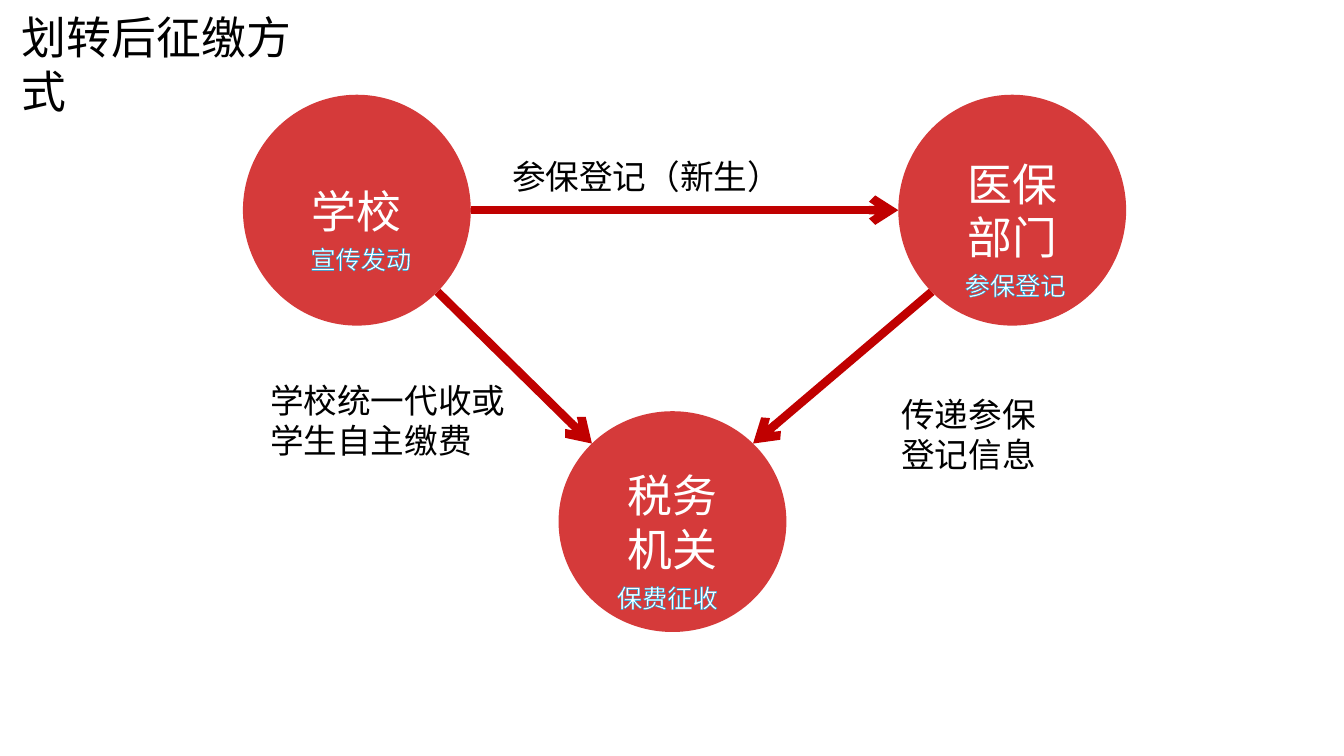
import math

from lxml import etree
from pptx import Presentation
from pptx.dml.color import RGBColor
from pptx.enum import shapes, text
from pptx.oxml import ns
from pptx.util import Inches, Pt

RED = RGBColor(0xD5, 0x3A, 0x3A)
DARK_RED = RGBColor(0xC0, 0x00, 0x00)
WHITE = RGBColor(0xFF, 0xFF, 0xFF)
BLACK = RGBColor(0x00, 0x00, 0x00)
SKY = RGBColor(0x00, 0xB0, 0xF0)
LATIN = "Arial"
CJK = "Noto Sans CJK SC"

TITLE = ("划转后征缴方式", (0.12, 0.05, 3.3, 0.64))
PARTIES = {
    "school": (["学校"], (2.41, 0.94, 2.26, 2.29)),
    "insurance": (["医保", "部门"], (8.91, 0.94, 2.26, 2.29)),
    "tax": (["税务", "机关"], (5.54, 4.08, 2.26, 2.19)),
}
ROLES = [
    ("宣传发动", (2.98, 2.37, 1.3, 0.4)),
    ("参保登记", (9.47, 2.63, 1.27, 0.4)),
    ("保费征收", (6.02, 5.73, 1.3, 0.4)),
]
FLOWS = [
    ("school", 0, "insurance", 180),
    ("school", 45, "tax", 225),
    ("insurance", 135, "tax", 315),
]
FLOW_LABELS = [
    ("参保登记（新生）", (4.98, 1.5, 3.28, 0.5)),
    ("学校统一代收或学生自主缴费", (2.58, 3.72, 2.69, 0.91)),
    ("传递参保登记信息", (8.84, 3.86, 1.67, 0.91)),
]


def add_run(paragraph, wording, size, face, color):
    run = paragraph.add_run()
    run.text = wording
    run.font.size = Pt(size)
    run.font.name = face
    run.font.color.rgb = color
    east_asian = etree.SubElement(run._r.get_or_add_rPr(), ns.qn("a:ea"))
    east_asian.set("typeface", CJK)
    return run


def add_label(slide, wording, box, size, color=BLACK):
    label = slide.shapes.add_textbox(*map(Inches, box))
    frame = label.text_frame
    frame.word_wrap = True
    frame.auto_size = text.MSO_AUTO_SIZE.SHAPE_TO_FIT_TEXT
    return add_run(frame.paragraphs[0], wording, size, LATIN, color)


def outline_run(run):
    properties = run._r.get_or_add_rPr()
    outline = etree.Element(ns.qn("a:ln"), w=str(Pt(0.8)))
    fill = etree.SubElement(outline, ns.qn("a:solidFill"))
    etree.SubElement(fill, ns.qn("a:srgbClr"), val=str(SKY))
    properties.insert(0, outline)


def add_party(slide, lines, box):
    circle = slide.shapes.add_shape(shapes.MSO_SHAPE.OVAL, *map(Inches, box))
    circle.shadow.inherit = False
    circle.fill.solid()
    circle.fill.fore_color.rgb = RED
    circle.line.fill.background()
    frame = circle.text_frame
    frame.vertical_anchor = text.MSO_ANCHOR.MIDDLE
    for index, line in enumerate(lines):
        paragraph = frame.add_paragraph() if index else frame.paragraphs[0]
        paragraph.alignment = text.PP_ALIGN.CENTER
        add_run(paragraph, line, 32, CJK, WHITE)


def rim_point(party, degrees):
    left, top, width, height = PARTIES[party][1]
    angle = math.radians(degrees)
    x = left + width / 2 * (1 + math.cos(angle))
    y = top + height / 2 * (1 + math.sin(angle))
    return Inches(x), Inches(y)


def add_flow(slide, source, leave, target, arrive):
    arrow = slide.shapes.add_connector(
        shapes.MSO_CONNECTOR.STRAIGHT,
        *rim_point(source, leave), *rim_point(target, arrive))
    arrow.line.color.rgb = DARK_RED
    arrow.line.width = Pt(6)
    etree.SubElement(arrow.line._get_or_add_ln(), ns.qn("a:tailEnd"), type="arrow")
    etree.SubElement(arrow._element.spPr, ns.qn("a:effectLst"))


def main():
    deck = Presentation()
    deck.slide_width, deck.slide_height = Inches(13.33), Inches(7.5)
    slide = deck.slides.add_slide(deck.slide_layouts[6])
    for flow in FLOWS:
        add_flow(slide, *flow)
    for lines, box in PARTIES.values():
        add_party(slide, lines, box)
    for wording, box in FLOW_LABELS:
        add_label(slide, wording, box, 24)
    for wording, box in ROLES:
        outline_run(add_label(slide, wording, box, 18, WHITE))
    add_label(slide, *TITLE, 32)
    deck.save("out.pptx")


if __name__ == "__main__":
    main()
